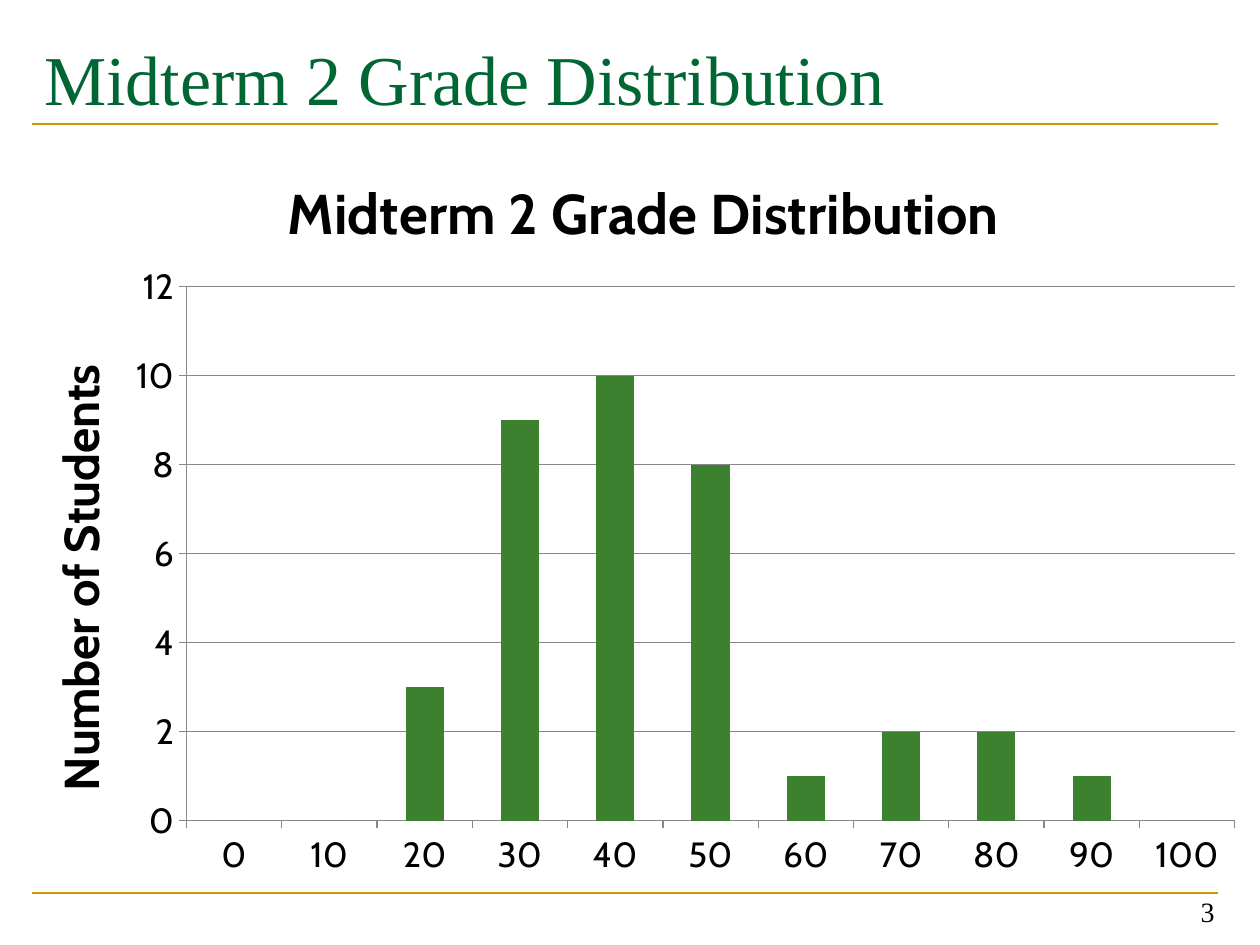
import pptx
import pptx.util
import pptx.chart.data
import pptx.dml.color
import pptx.enum.chart
import pptx.enum.shapes
import pptx.enum.text
import pptx.oxml
import lxml.etree

PX = 914400 / 126
THEME = {
    "serif": "Times New Roman", "sans": "Cabin",
    "heading": "006633", "rule": "CC9900", "bar": "3B812F", "text": "000000", "grid": "878787",
    "title_size": 40, "chart_size": 32, "axis_size": 28, "tick_size": 20, "number_size": 16,
}
HEADING = "Midterm 2 Grade Distribution"
STUDENTS = (0, 0, 3, 9, 10, 8, 1, 2, 2, 1, 0)


def emu(*lengths):
    """Turn px lengths into EMU."""
    return [round(n * PX) for n in lengths]


def rgb(name):
    """Give a theme colour."""
    return pptx.dml.color.RGBColor.from_string(THEME[name])


def style(font, face, size, colour="text", bold=False):
    """Apply a theme text style to a font."""
    values = {"name": THEME[face], "size": pptx.util.Pt(THEME[size]), "bold": bold}
    for key, value in values.items():
        setattr(font, key, value)
    font.color.rgb = rgb(colour)


def add_text(slide, box, text, size, colour, align, anchor):
    """Place one line of serif text in a box."""
    tf = slide.shapes.add_textbox(*emu(*box)).text_frame
    for key, value in {"word_wrap": True, "vertical_anchor": anchor}.items():
        setattr(tf, key, value)
    p = tf.paragraphs[0]
    p.alignment = align
    r = p.add_run()
    r.text = text
    style(r.font, "serif", size, colour)


def add_rule(slide, x, y, width):
    """Draw a horizontal gold rule."""
    line = slide.shapes.add_connector(
        pptx.enum.shapes.MSO_CONNECTOR.STRAIGHT, *emu(x, y, x + width, y))
    line.line.color.rgb = rgb("rule")
    line.line.width = pptx.util.Pt(1.5)
    sppr = line._element.spPr
    lxml.etree.SubElement(sppr, pptx.oxml.ns.qn("a:effectLst"))


def set_layout(parent, inner=False, **fractions):
    """Fix the position of a chart part by fractions of the chart."""
    tag = pptx.oxml.ns.qn
    layout = parent.find(tag("c:layout"))
    if layout is None:
        layout = lxml.etree.Element(tag("c:layout"))
        tx = parent.find(tag("c:tx"))
        parent.insert(0 if tx is None else parent.index(tx) + 1, layout)
    manual = lxml.etree.SubElement(layout, tag("c:manualLayout"))
    target = {"layoutTarget": "inner"} if inner else {}
    values = {**target, "xMode": "edge", "yMode": "edge", **fractions}
    for key, value in values.items():
        lxml.etree.SubElement(manual, tag("c:" + key)).set("val", str(value))


def set_title(owner, text, size, **position):
    """Title a chart or an axis at a fixed position."""
    tf = owner.text_frame
    tf.text = text
    style(tf.paragraphs[0].runs[0].font, "sans", size, bold=True)
    set_layout(owner._element, **position)


def add_histogram(slide, box):
    """Place the grade histogram in a box."""
    data = pptx.chart.data.CategoryChartData()
    data.categories = [str(10 * i) for i in range(len(STUDENTS))]
    data.add_series("Series 1", STUDENTS)
    chart = slide.shapes.add_chart(
        pptx.enum.chart.XL_CHART_TYPE.COLUMN_CLUSTERED, *emu(*box), data).chart
    chart.has_legend = False
    style(chart.font, "sans", "tick_size")
    set_title(chart.chart_title, HEADING, "chart_size", x=0.22, y=0.05)
    set_layout(chart._chartSpace.chart.plotArea, True, x=0.148, y=0.21, w=0.832, h=0.697)

    plot = chart.plots[0]
    for key, value in {"gap_width": 150, "vary_by_categories": False}.items():
        setattr(plot, key, value)
    fill = plot.series[0].format.fill
    fill.solid()
    fill.fore_color.rgb = rgb("bar")

    values = chart.value_axis
    limits = {"minimum_scale": 0, "maximum_scale": 12, "major_unit": 2, "has_major_gridlines": True}
    for key, value in limits.items():
        setattr(values, key, value)
    set_title(values.axis_title, "Number of Students", "axis_size", x=0.03, y=0.3)
    for axis in (chart.category_axis, values):
        axis.major_tick_mark = pptx.enum.chart.XL_TICK_MARK.OUTSIDE
        style(axis.tick_labels.font, "sans", "tick_size")
    for part in (chart.category_axis, values, values.major_gridlines):
        part.format.line.color.rgb = rgb("grid")
        part.format.line.width = pptx.util.Pt(0.75)


def add_frame(slide, x, width):
    """Place the heading, rules and slide number."""
    align, anchor = pptx.enum.text.PP_ALIGN, pptx.enum.text.MSO_ANCHOR
    for y in (893, 124):
        add_rule(slide, x, y, width)
    add_text(slide, (x, 29, width, 90), HEADING, "title_size", "heading", align.LEFT, anchor.TOP)
    add_text(slide, (x + width - 284, 871, 293, 63), "3", "number_size", "text",
             align.RIGHT, anchor.BOTTOM)


def main():
    """Build and save the slide."""
    prs = pptx.Presentation()
    prs.slide_width, prs.slide_height = emu(1260, 945)
    slide = prs.slides.add_slide(prs.slide_layouts[6])
    add_frame(slide, 32, 1186)
    add_histogram(slide, (0, 126, 1260, 766))
    prs.save("out.pptx")


if __name__ == "__main__":
    main()
